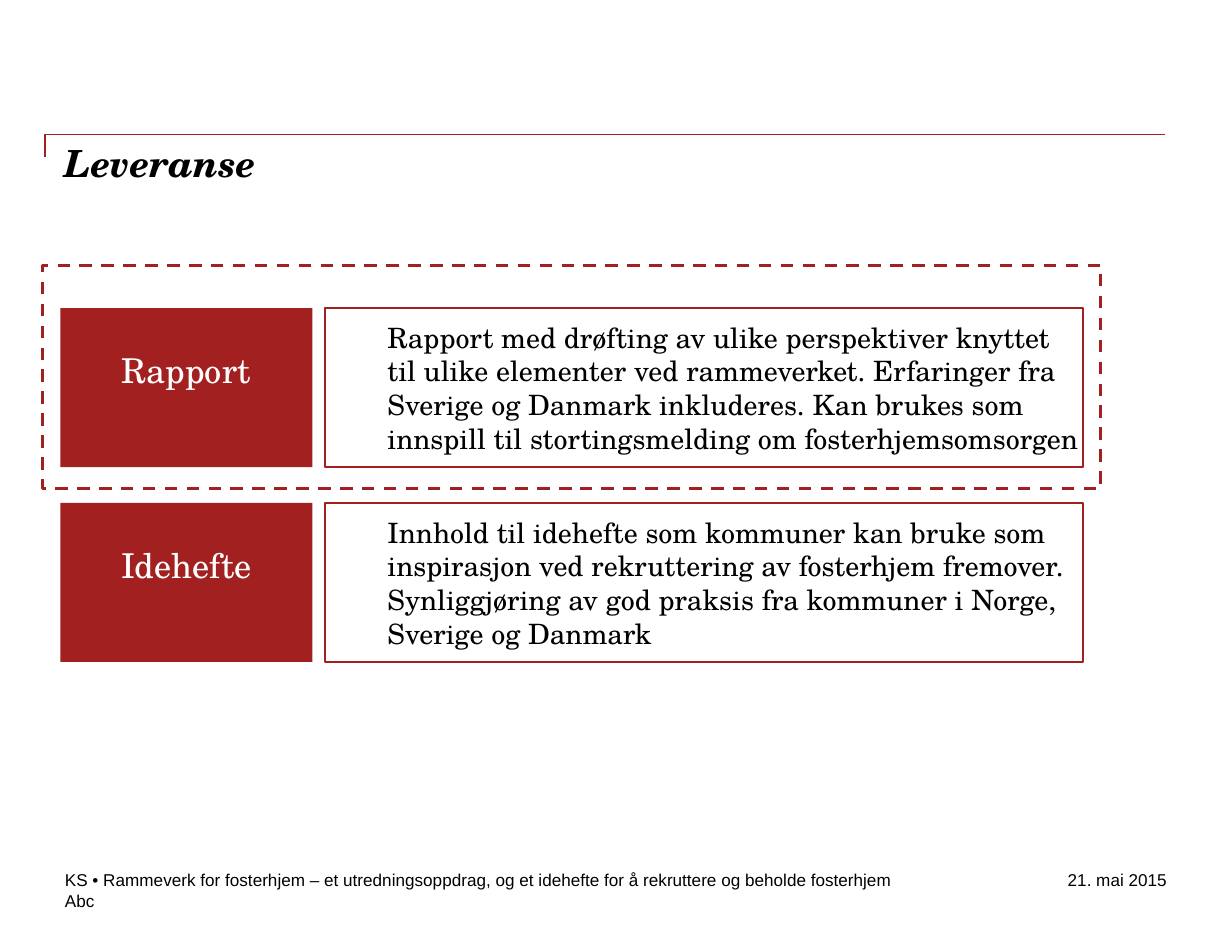
"""Builds the slide on deliverables: a title, two labelled rows and a footer."""
import collections

import pptx
import pptx.dml.color
import pptx.enum.dml
import pptx.enum.shapes
import pptx.enum.text
import pptx.util

RED = pptx.dml.color.RGBColor(0xA3, 0x20, 0x20)
WHITE = pptx.dml.color.RGBColor(0xFF, 0xFF, 0xFF)
BLACK = pptx.dml.color.RGBColor(0x00, 0x00, 0x00)
SERIF, SANS = "TeX Gyre Schola", "Arial"
COLS, ROWS = 110, 85
CELL = pptx.util.Inches(0.1)
ALIGN = pptx.enum.text.PP_ALIGN
ANCHOR = pptx.enum.text.MSO_ANCHOR
RECT = pptx.enum.shapes.MSO_SHAPE.RECTANGLE

Box = collections.namedtuple("Box", "col row cols rows")

DELIVERABLES = [
    ("Rapport",
     "Rapport med drøfting av ulike perspektiver knyttet til ulike elementer ved "
     "rammeverket. Erfaringer fra Sverige og Danmark inkluderes. Kan brukes som "
     "innspill til stortingsmelding om fosterhjemsomsorgen"),
    ("Idehefte",
     "Innhold til idehefte som kommuner kan bruke som inspirasjon ved rekruttering "
     "av fosterhjem fremover. Synliggjøring av god praksis fra kommuner i Norge, "
     "Sverige og Danmark"),
]
FOOTER = ("KS • Rammeverk for fosterhjem – et utredningsoppdrag, og et idehefte "
          "for å rekruttere og beholde fosterhjem")


def emu(box):
    """Turn grid cells into slide lengths."""
    return [round(n * CELL) for n in box]


def write(sp, text, size, font, color, align=ALIGN.LEFT, anchor=ANCHOR.TOP,
          left=0, top=0, bold=False, italic=False):
    """Put one formatted run into a shape, inset by grid cells."""
    tf = sp.text_frame
    tf.word_wrap = True
    tf.auto_size = pptx.enum.text.MSO_AUTO_SIZE.NONE
    tf.vertical_anchor = anchor
    tf.margin_left, tf.margin_top = round(left * CELL), round(top * CELL)
    tf.margin_right = tf.margin_bottom = 0
    p = tf.paragraphs[0]
    p.alignment = align
    r = p.add_run()
    r.text = text
    r.font.size, r.font.name = pptx.util.Pt(size), font
    r.font.bold, r.font.italic = bold, italic
    r.font.color.rgb = color


def add_rect(slide, box, fill=None, line=None, width=1.5):
    """Add a flat rectangle with an optional fill and outline."""
    sp = slide.shapes.add_shape(RECT, *emu(box))
    sp.shadow.inherit = False
    if fill is None:
        sp.fill.background()
    else:
        sp.fill.solid()
        sp.fill.fore_color.rgb = fill
    if line is None:
        sp.line.fill.background()
    else:
        sp.line.color.rgb = line
        sp.line.width = pptx.util.Pt(width)
    return sp


def add_header(slide, box):
    """Draw the angled rule and set the title below it."""
    rule = slide.shapes.build_freeform(box.col, box.row + 1.9, scale=CELL)
    rule.add_line_segments([(box.col, box.row), (box.col + box.cols, box.row)],
                           close=False)
    sp = rule.convert_to_shape()
    sp.shadow.inherit = False
    sp.fill.background()
    sp.line.color.rgb = RED
    sp.line.width = pptx.util.Pt(1)
    title = slide.shapes.title
    title.left, title.top, title.width, title.height = emu(
        Box(box.col + 1.6, box.row + 0.8, box.cols - 1.6, box.rows - 0.8))
    write(title, "Leveranse", 24, SERIF, BLACK, bold=True, italic=True)


def add_deliverable(slide, box, label, text):
    """Place a red label with its outlined description."""
    label_cols, gap = 22.5, 1.1
    sp = add_rect(slide, box._replace(cols=label_cols), RED)
    write(sp, label, 22, SERIF, WHITE, ALIGN.CENTER, top=3.7)
    offset = label_cols + gap
    sp = add_rect(slide, box._replace(col=box.col + offset, cols=box.cols - offset),
                  WHITE, RED)
    write(sp, text, 18, SERIF, BLACK, anchor=ANCHOR.MIDDLE, left=5.6)


def add_deliverables(slide, box):
    """Stack the deliverables and frame the first one."""
    row_height, gap = 14.2, 3.2
    for i, (label, text) in enumerate(DELIVERABLES):
        row = box.row + i * (row_height + gap)
        add_deliverable(slide, box._replace(row=row, rows=row_height), label, text)
    frame = add_rect(slide, Box(box.col - 1.6, box.row - 3.8, box.cols + 3.2, 19.9),
                     line=RED, width=2)
    frame.line.dash_style = pptx.enum.dml.MSO_LINE.DASH


def add_footer(slide, box):
    """Place the project line, the firm and the date."""
    line, date_cols = box.rows / 2, 14
    parts = [
        (FOOTER, box._replace(cols=box.cols - date_cols, rows=line), ALIGN.LEFT),
        ("Abc", box._replace(row=box.row + line, cols=10, rows=line), ALIGN.LEFT),
        ("21. mai 2015", Box(box.col + box.cols - date_cols, box.row, date_cols, line),
         ALIGN.RIGHT),
    ]
    for text, place, align in parts:
        sp = slide.shapes.add_textbox(*emu(place))
        write(sp, text, 11, SANS, BLACK, align)


def main():
    """Build and save the slide."""
    prs = pptx.Presentation()
    prs.slide_width, prs.slide_height = COLS * CELL, ROWS * CELL
    slide = prs.slides.add_slide(prs.slide_layouts[5])
    add_header(slide, Box(4.2, 11.7, 100, 10.8))
    add_deliverables(slide, Box(5.4, 27.5, 91.3, 31.6))
    add_footer(slide, Box(5.8, 77.6, 98.4, 3.8))
    prs.save("out.pptx")


if __name__ == "__main__":
    main()
